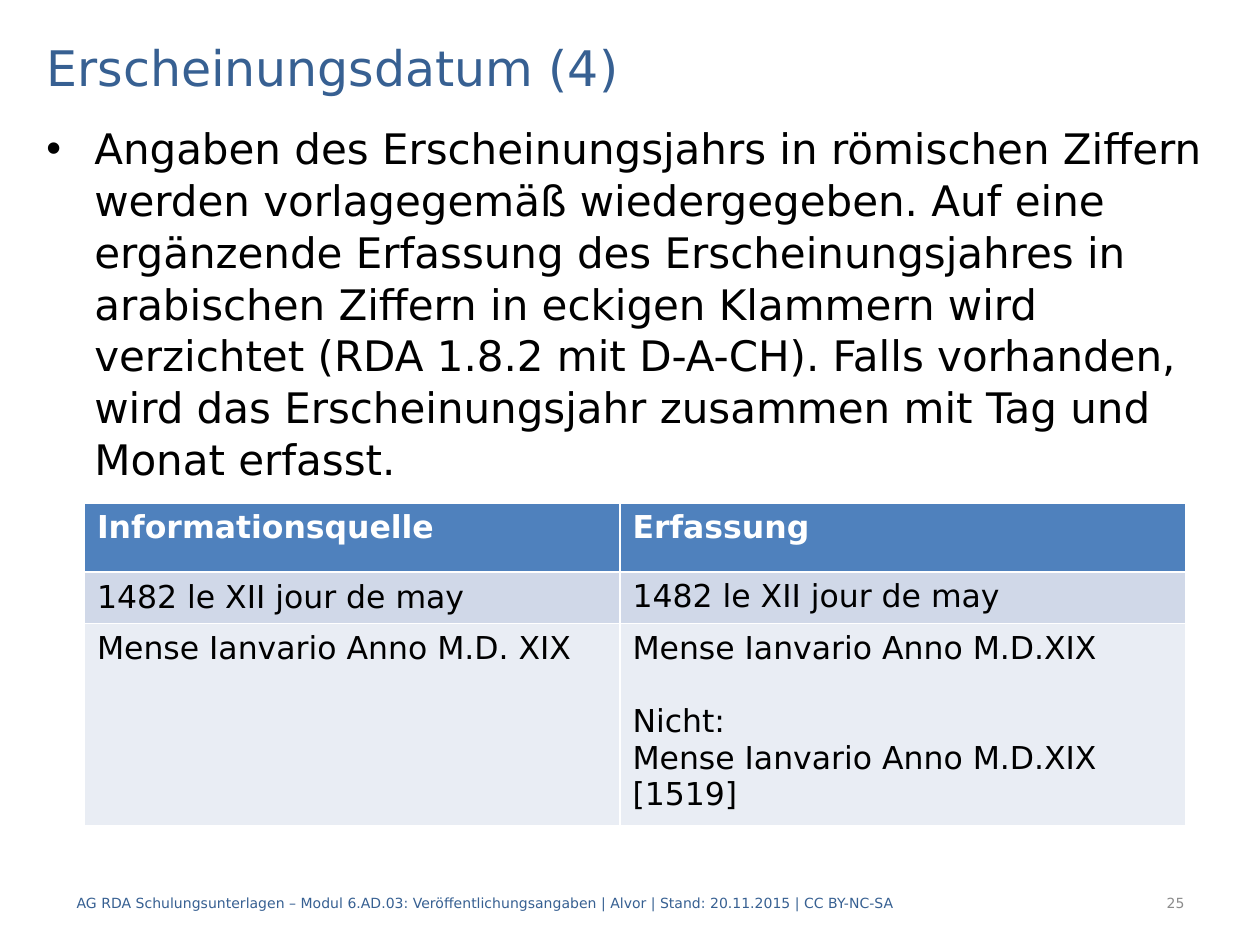
"""Build the slide on recording the date of publication."""
from lxml.etree import SubElement
from pptx import Presentation
from pptx.dml.color import RGBColor
from pptx.enum.text import MSO_ANCHOR as Anchor, PP_ALIGN as Align
from pptx.oxml.ns import qn
from pptx.util import Inches, Pt

BLUE = RGBColor(0x37, 0x60, 0x92)
GREY = RGBColor(0x8C, 0x8C, 0x8C)
BLACK = RGBColor(0, 0, 0)
WHITE = RGBColor(255, 255, 255)
FILLS = [RGBColor(0x4F, 0x81, 0xBD), RGBColor(0xD0, 0xD8, 0xE8), RGBColor(0xE9, 0xED, 0xF4)]

TITLE = "Erscheinungsdatum (4)"
BODY = (
    "Angaben des Erscheinungsjahrs in römischen Ziffern werden vorlagegemäß "
    "wiedergegeben. Auf eine ergänzende Erfassung des Erscheinungsjahres in "
    "arabischen Ziffern in eckigen Klammern wird verzichtet (RDA 1.8.2 mit "
    "D-A-CH). Falls vorhanden, wird das Erscheinungsjahr zusammen mit Tag und "
    "Monat erfasst."
)
FOOT = (
    "AG RDA Schulungsunterlagen – Modul 6.AD.03: Veröffentlichungsangaben | "
    "Alvor | Stand: 20.11.2015 | CC BY-NC-SA"
)
PAGE = "25"
ROWS = [
    (["Informationsquelle"], ["Erfassung"]),
    (["1482 le XII jour de may"], ["1482 le XII jour de may"]),
    (
        ["Mense Ianvario Anno M.D. XIX"],
        ["Mense Ianvario Anno M.D.XIX", "Nicht:", "Mense Ianvario Anno M.D.XIX [1519]"],
    ),
]
WIDTHS = [4.25, 4.49]
HEIGHTS = [0.55, 0.41, 1.6]

TEXTS = {
    "title": dict(size=Pt(28), color=BLUE),
    "body": dict(size=Pt(24), color=BLACK),
    "foot": dict(size=Pt(8), color=BLUE),
    "page": dict(size=Pt(8), color=GREY),
    "head": dict(size=Pt(18), color=WHITE, bold=True),
    "cell": dict(size=Pt(18), color=BLACK, bold=False),
}


def write(frame, lines, kind, align=Align.LEFT):
    """Fill a text frame with one styled paragraph per line."""
    frame.word_wrap = True
    for i, line in enumerate(lines):
        para = frame.add_paragraph() if i else frame.paragraphs[0]
        para.alignment = align
        run = para.add_run()
        run.text = line
        run.font.name = "DejaVu Sans"
        for key, value in TEXTS[kind].items():
            if key == "color":
                run.font.color.rgb = value
            else:
                setattr(run.font, key, value)
    return frame


def add_text(slide, box, text, kind, anchor=Anchor.MIDDLE, align=Align.LEFT):
    """Add a text box and return its frame."""
    frame = slide.shapes.add_textbox(*map(Inches, box)).text_frame
    frame.vertical_anchor = anchor
    return write(frame, [text], kind, align)


def add_bullet(para, indent):
    """Give a paragraph a hanging round bullet."""
    props = para._p.get_or_add_pPr()
    props.set("marL", str(Inches(indent)))
    props.set("indent", str(-Inches(indent)))
    SubElement(props, qn("a:buFont"), typeface="Arial")
    SubElement(props, qn("a:buChar"), char="•")


def add_grid(slide):
    """Add the table of sources and their recorded forms."""
    box = map(Inches, (0.67, 3.99, sum(WIDTHS), sum(HEIGHTS)))
    table = slide.shapes.add_table(len(ROWS), len(WIDTHS), *box).table
    for col, width in zip(table.columns, WIDTHS):
        col.width = Inches(width)
    for r, (row, height) in enumerate(zip(ROWS, HEIGHTS)):
        table.rows[r].height = Inches(height)
        for c, lines in enumerate(row):
            cell = table.cell(r, c)
            cell.fill.solid()
            cell.fill.fore_color.rgb = FILLS[r]
            frame = write(cell.text_frame, lines, "cell" if r else "head")
            if r and c == 0:
                frame.paragraphs[0].line_spacing = 1.02
    frame.paragraphs[1].space_before = Pt(21)


def main():
    deck = Presentation()
    deck.slide_width, deck.slide_height = Inches(10), Inches(7.5)
    slide = deck.slides.add_slide(deck.slide_layouts[5])

    title = slide.shapes.title
    title.left, title.top, title.width, title.height = map(Inches, (0.27, 0.21, 9.45, 0.64))
    title.text_frame.vertical_anchor = Anchor.MIDDLE
    write(title.text_frame, [TITLE], "title")

    add_text(slide, (0.51, 6.97, 8.66, 0.4), FOOT, "foot")
    add_text(slide, (7.91, 6.97, 1.59, 0.4), PAGE, "page", align=Align.RIGHT)
    body = add_text(slide, (0.27, 0.91, 9.45, 5.98), BODY, "body", Anchor.TOP)
    body.paragraphs[0].line_spacing = 1.03
    add_bullet(body.paragraphs[0], 0.38)
    add_grid(slide)
    deck.save("out.pptx")


if __name__ == "__main__":
    main()
